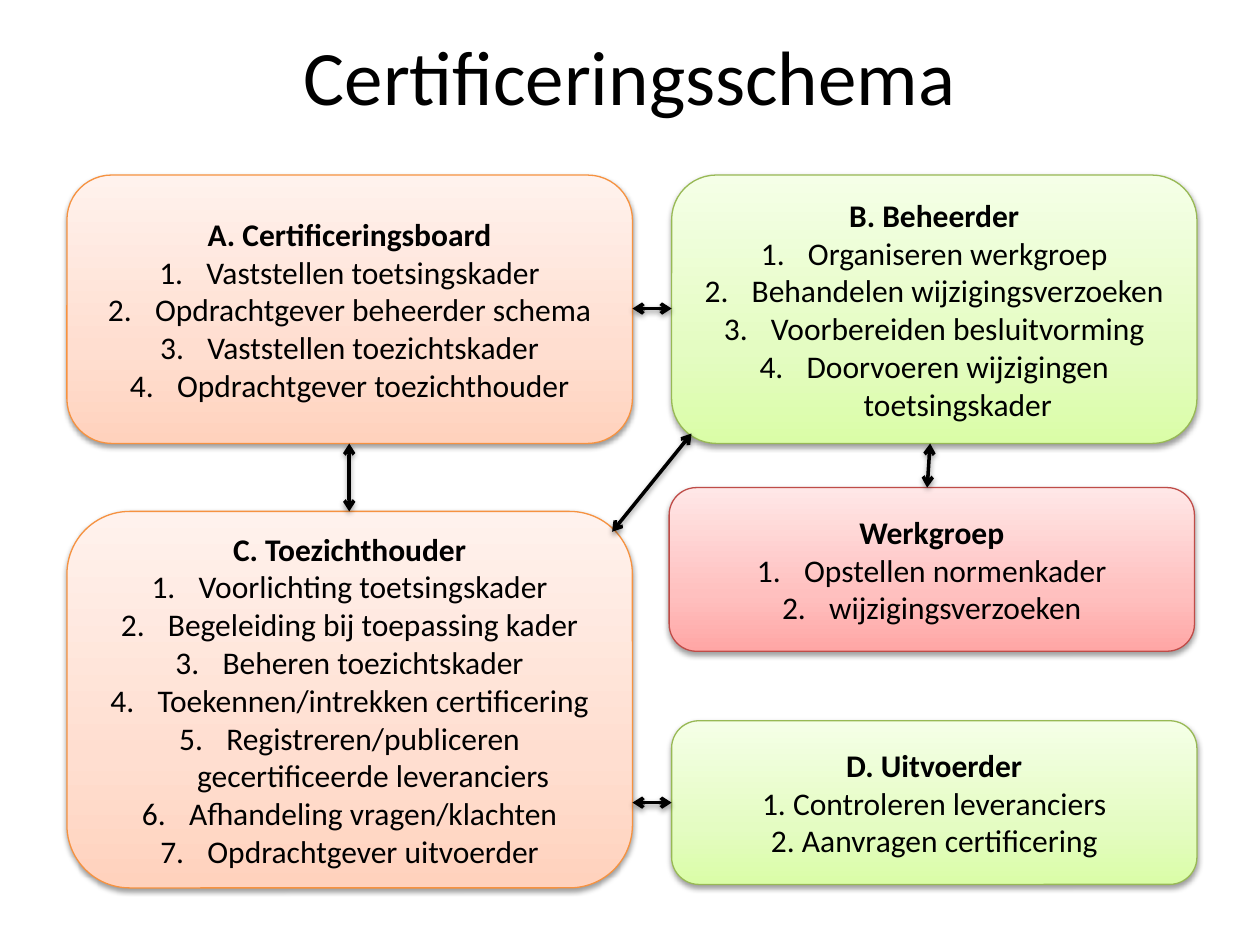
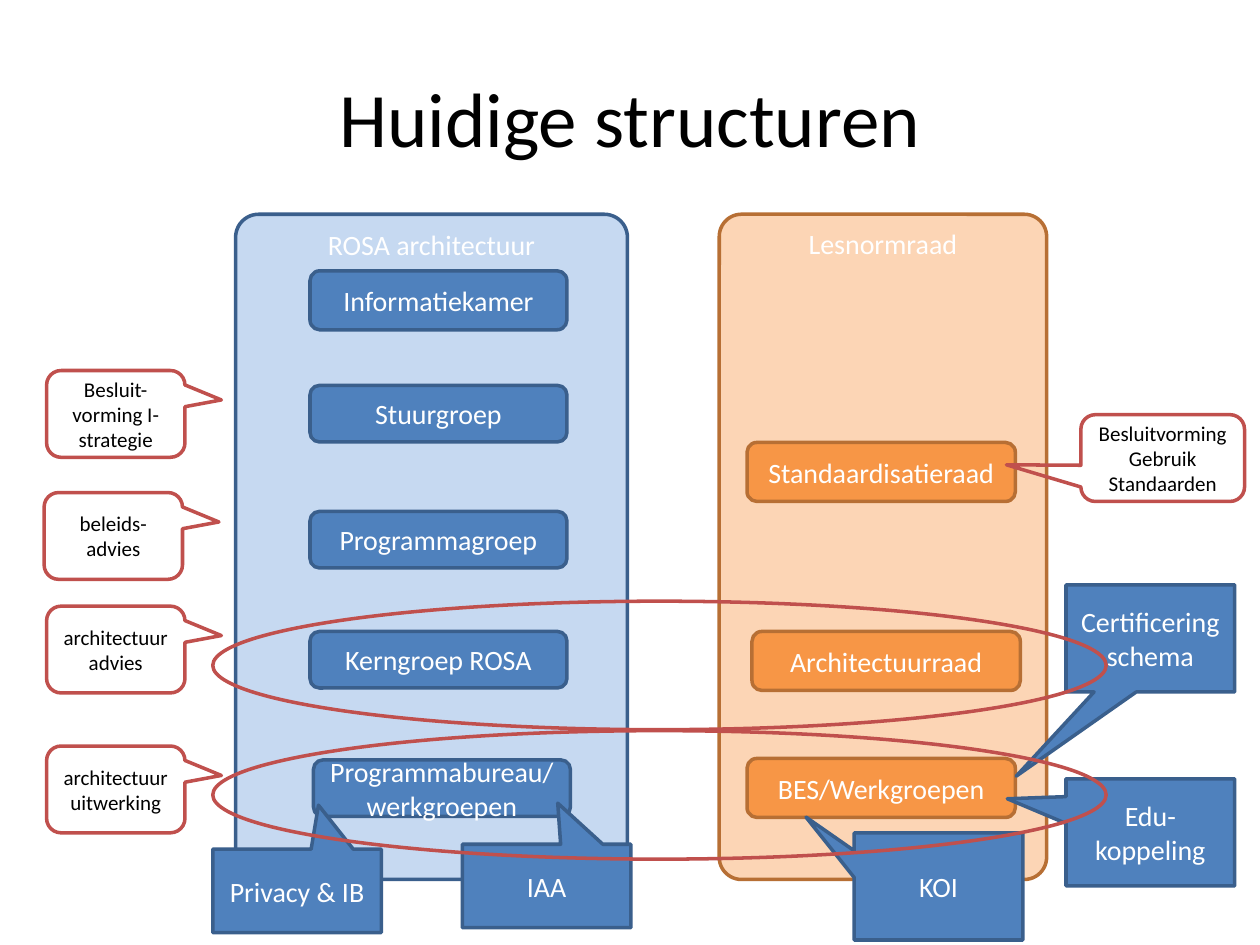
import copy

import pptx
import pptx.dml.color
import pptx.enum.dml
import pptx.enum.shapes
import pptx.enum.text
import pptx.oxml
import pptx.oxml.ns
import pptx.util

Cm = pptx.util.Cm
Pt = pptx.util.Pt
SHAPES = pptx.enum.shapes.MSO_SHAPE
ANCHORS = pptx.enum.text.MSO_ANCHOR

FONT = "Calibri"
COLORS = {
    "black": "000000",
    "white": "FFFFFF",
    "blue": "4F81BD",
    "blue line": "3A5F8C",
    "light blue": "C6D9F1",
    "orange": "F79646",
    "orange line": "B76F34",
    "light orange": "FCD5B5",
    "red": "C0504D",
}
# Gradient stops from bottom to top, then the outline
GRADIENTS = {
    "green": ("DAFDA7", "E4FCC2", "F5FFE7", "98B955"),
    "peach": ("FFD2BD", "FFDED0", "FFF2ED", "F69240"),
    "rose": ("FFA6A5", "FFC0BF", "FFE7E7", "BF4C48"),
}
STOP_POSITIONS = (0, 0.35, 1)
SOFT_SHADOW = (
    f'<a:effectLst {pptx.oxml.ns.nsdecls("a")}>'
    '<a:outerShdw blurRad="40000" dist="20000" dir="5400000" rotWithShape="0">'
    '<a:srgbClr val="000000"><a:alpha val="38000"/></a:srgbClr>'
    "</a:outerShdw></a:effectLst>"
)


def write_text(shape, text, size=16, color="white", anchor=ANCHORS.MIDDLE,
               bold_heading=False, numbered=False):
    """Write one paragraph per line; a vertical tab breaks inside a paragraph."""
    frame = shape.text_frame
    frame.word_wrap = True
    frame.vertical_anchor = anchor
    frame.text = text
    for index, paragraph in enumerate(frame.paragraphs):
        paragraph.alignment = pptx.enum.text.PP_ALIGN.CENTER
        for run in paragraph.runs:
            run.font.name = FONT
            run.font.size = Pt(size)
            run.font.bold = bold_heading and index == 0
            run.font.color.rgb = pptx.dml.color.RGBColor.from_string(COLORS[color])
        if numbered and index > 0:
            properties = paragraph._p.get_or_add_pPr()
            properties.set("marL", str(Cm(0.95)))
            properties.set("indent", str(-Cm(0.95)))
            properties.append(pptx.oxml.parse_xml(
                f'<a:buAutoNum {pptx.oxml.ns.nsdecls("a")} type="arabicPeriod"/>'))


def add_box(slide, kind, bounds, fill, line, line_width=2, adjustments=()):
    """Add a preset shape without shadow; fill and line are hex strings."""
    shape = slide.shapes.add_shape(kind, *[Cm(length) for length in bounds])
    for index, value in enumerate(adjustments):
        shape.adjustments[index] = value
    if fill:
        shape.fill.solid()
        shape.fill.fore_color.rgb = pptx.dml.color.RGBColor.from_string(fill)
    else:
        shape.fill.background()
    shape.line.color.rgb = pptx.dml.color.RGBColor.from_string(line)
    shape.line.width = Pt(line_width)
    shape.shadow.inherit = False
    return shape


presentation = pptx.Presentation()
presentation.slide_width = Cm(25.4)
presentation.slide_height = Cm(19.05)

# Slides with their titles
slides = []
for title, top in (("Certificeringsschema", -0.08), ("Huidige structuren", 0.76)):
    slide = presentation.slides.add_slide(presentation.slide_layouts[5])
    placeholder = slide.shapes.title
    placeholder.left, placeholder.top = Cm(1.27), Cm(top)
    placeholder.width, placeholder.height = Cm(22.86), Cm(3.18)
    write_text(placeholder, title, size=44, color="black")
    slides.append(slide)
scheme_slide, structure_slide = slides

# Scheme: roles and their tasks
roles = [
    ("green", (13.54, 3.53, 10.59, 5.41), True,
     "B. Beheerder\nOrganiseren werkgroep\nBehandelen wijzigingsverzoeken\n"
     "Voorbereiden besluitvorming\nDoorvoeren wijzigingen toetsingskader"),
    ("green", (13.54, 14.53, 10.59, 3.3), False,
     "D. Uitvoerder\n1. Controleren leveranciers\n2. Aanvragen certificering"),
    ("peach", (1.35, 10.31, 11.4, 7.59), True,
     "C. Toezichthouder\nVoorlichting toetsingskader\n"
     "Begeleiding bij toepassing kader\nBeheren toezichtskader\n"
     "Toekennen/intrekken certificering\n"
     "Registreren/publiceren gecertificeerde leveranciers\n"
     "Afhandeling vragen/klachten\nOpdrachtgever uitvoerder"),
    ("peach", (1.35, 3.53, 11.4, 5.41), True,
     "A. Certificeringsboard\nVaststellen toetsingskader\n"
     "Opdrachtgever beheerder schema\nVaststellen toezichtskader\n"
     "Opdrachtgever toezichthouder"),
    ("rose", (13.49, 9.83, 10.59, 3.3), True,
     "Werkgroep\nOpstellen normenkader\nwijzigingsverzoeken"),
]
for gradient, bounds, numbered, text in roles:
    *stop_colors, outline = GRADIENTS[gradient]
    role = add_box(scheme_slide, SHAPES.ROUNDED_RECTANGLE, bounds,
                   stop_colors[0], outline, line_width=0.75)
    role.fill.gradient()
    role.fill.gradient_angle = 90
    properties = role.element.spPr
    stop_list = properties.find(".//" + pptx.oxml.ns.qn("a:gsLst"))
    stop_list.append(copy.deepcopy(stop_list[0]))
    for stop, position, color in zip(role.fill.gradient_stops, STOP_POSITIONS, stop_colors):
        stop.position = position
        stop.color.rgb = pptx.dml.color.RGBColor.from_string(color)
    properties.replace(properties.find(pptx.oxml.ns.qn("a:effectLst")),
                       pptx.oxml.parse_xml(SOFT_SHADOW))
    write_text(role, text, size=18, color="black", bold_heading=True, numbered=numbered)

# Scheme: two-way arrows between the roles
arrows = [
    (12.75, 6.22, 13.54, 6.22),
    (7.04, 8.94, 7.04, 10.31),
    (12.75, 16.18, 13.54, 16.18),
    (12.34, 10.72, 13.94, 8.74),
    (18.75, 8.94, 18.69, 9.83),
]
for ends in arrows:
    arrow = scheme_slide.shapes.add_connector(
        pptx.enum.shapes.MSO_CONNECTOR.STRAIGHT, *[Cm(length) for length in ends])
    arrow.line.width = Pt(2)
    arrow.line.color.rgb = pptx.dml.color.RGBColor.from_string(COLORS["black"])
    for end in ("headEnd", "tailEnd"):
        arrow.line._ln.append(pptx.oxml.parse_xml(
            f'<a:{end} {pptx.oxml.ns.nsdecls("a")} type="arrow"/>'))
    arrow.element.spPr.append(pptx.oxml.parse_xml(SOFT_SHADOW))

# Structures: the two columns with their bodies
columns = [
    ("ROSA architectuur", "blue", (4.75, 4.32, 7.9, 13.41), 0.059, 5.18, [
        ("Informatiekamer", 6.25, 5.46, 1.19),
        ("Stuurgroep", 6.25, 7.77, 1.14),
        ("Programmagroep", 6.25, 10.31, 1.14),
        ("Kerngroep ROSA", 6.25, 12.73, 1.14),
        ("Programmabureau/werkgroepen", 6.32, 15.32, 1.14),
    ]),
    ("Lesnormraad", "orange", (14.5, 4.32, 6.6, 13.41), 0.068, 5.41, [
        ("Standaardisatieraad", 15.06, 8.92, 1.19),
        ("Architectuurraad", 15.16, 12.73, 1.19),
        ("BES/Werkgroepen", 15.06, 15.29, 1.19),
    ]),
]
for heading, hue, bounds, rounding, body_width, bodies in columns:
    outline = COLORS[f"{hue} line"]
    column = add_box(structure_slide, SHAPES.ROUNDED_RECTANGLE, bounds,
                     COLORS[f"light {hue}"], outline, adjustments=[rounding])
    write_text(column, heading, anchor=ANCHORS.TOP)
    for name, left, top, height in bodies:
        body = add_box(structure_slide, SHAPES.ROUNDED_RECTANGLE,
                       (left, top, body_width, height), COLORS[hue], outline)
        write_text(body, name)

# Structures: working groups in blue callouts
working_groups = [
    ("Certificering\vschema", 21.49, 11.79, 2.16, (-0.795, 1.286)),
    ("Edu-\vkoppeling", 21.49, 15.7, 2.16, (-0.848, -0.313)),
    ("Privacy & IB", 4.29, 17.12, 1.68, (0.127, -1.029)),
    ("IAA", 9.32, 17.02, 1.68, (0.066, -0.994)),
    ("KOI", 17.22, 16.79, 2.16, (-0.786, -0.647)),
]
for name, left, top, height, tip in working_groups:
    callout = add_box(structure_slide, SHAPES.RECTANGULAR_CALLOUT, (left, top, 3.4, height),
                      COLORS["blue"], COLORS["blue line"], adjustments=tip)
    write_text(callout, name)

# Structures: ellipses around bodies on the same level
for top in (12.12, 14.73):
    add_box(structure_slide, SHAPES.OVAL, (4.29, top, 18.01, 2.59), None, COLORS["red"])

# Structures: the purpose of each level
RIGHTWARD_TIP = (0.763, -0.161, 0.167)
purposes = [
    ("Besluit-\vvorming I-\vstrategie", 0.94, 7.47, 2.79, RIGHTWARD_TIP),
    ("beleids-\vadvies", 0.89, 9.93, 2.79, RIGHTWARD_TIP),
    ("architectuur\vadvies", 0.94, 12.22, 2.79, RIGHTWARD_TIP),
    ("architectuur\vuitwerking", 0.94, 15.04, 2.79, RIGHTWARD_TIP),
    ("Besluitvorming\nGebruik\nStandaarden", 21.79, 8.36, 3.3, (-0.955, 0.078, 0.167)),
]
for text, left, top, width, tip in purposes:
    callout = add_box(structure_slide, SHAPES.ROUNDED_RECTANGULAR_CALLOUT,
                      (left, top, width, 1.75), None, COLORS["red"], adjustments=tip)
    write_text(callout, text, size=12, color="black")

presentation.save("out.pptx")
